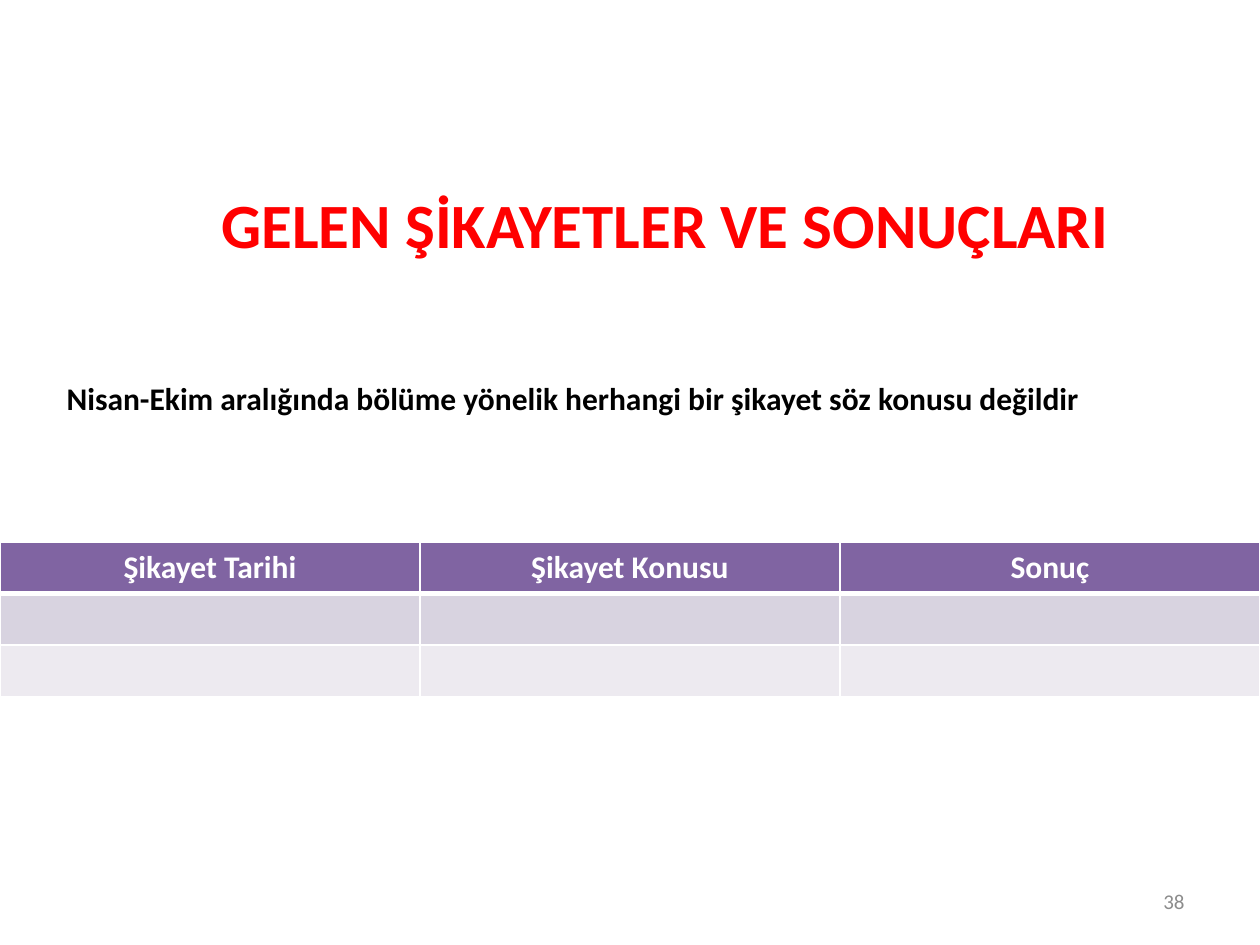
from dataclasses import dataclass

from lxml import etree
from pptx import Presentation
from pptx import util as u
from pptx.dml.color import RGBColor
from pptx.enum import text
from pptx.oxml.ns import qn

TITLE = "GELEN ŞİKAYETLER VE SONUÇLARI"
STATEMENT = "Nisan-Ekim aralığında bölüme yönelik herhangi bir şikayet söz konusu değildir"
PAGE_NUMBER = "38"
TABLE_ROWS = [
    ("Şikayet Tarihi", "Şikayet Konusu", "Sonuç"),
    ("", "", ""),
    ("", "", ""),
]

WIDTH, HEIGHT = u.Inches(10), u.Inches(7.5)
ROW_HEIGHT = u.Inches(0.41)


@dataclass(frozen=True)
class Theme:
    font: str = "Calibri"
    title: str = "FF0000"
    body: str = "000000"
    muted: str = "8C8C8C"
    white: str = "FFFFFF"
    row_fills: tuple = ("8064A2", "D8D3E0", "EDEAF0")
    title_size: int = 36
    body_size: int = 18
    number_size: int = 12


THEME = Theme()


def place(box, left, top, width, height):
    box.left, box.top = u.Inches(left), u.Inches(top)
    box.width, box.height = u.Inches(width), u.Inches(height)


def write(frame, words, size, color, bold=True, align=text.PP_ALIGN.LEFT,
          anchor=text.MSO_ANCHOR.TOP):
    frame.word_wrap = True
    frame.vertical_anchor = anchor
    para = frame.paragraphs[0]
    para.alignment = align
    span = para.add_run()
    span.text = words
    span.font.name = THEME.font
    span.font.size = u.Pt(size)
    span.font.bold = bold
    span.font.color.rgb = RGBColor.from_string(color)


def add_borders(cell, widths):
    """Draw white cell borders; widths maps side tags to points."""
    properties = cell._tc.get_or_add_tcPr()
    for side, points in widths.items():
        line = etree.SubElement(properties, qn(f"a:{side}"), w=str(u.Pt(points)))
        fill = etree.SubElement(line, qn("a:solidFill"))
        etree.SubElement(fill, qn("a:srgbClr"), val=THEME.white)


def add_complaint_table(page):
    row_count, column_count = len(TABLE_ROWS), len(TABLE_ROWS[0])
    table = page.shapes.add_table(row_count, column_count, 0, u.Inches(4.3),
                                  WIDTH, ROW_HEIGHT * row_count).table
    for r, labels in enumerate(TABLE_ROWS):
        table.rows[r].height = ROW_HEIGHT
        top = 3 if r == 1 else 1
        bottom = 3 if r == 0 else 1
        for c, label in enumerate(labels):
            cell = table.cell(r, c)
            add_borders(cell, {"lnL": 1, "lnR": 1, "lnT": top, "lnB": bottom})
            cell.fill.solid()
            cell.fill.fore_color.rgb = RGBColor.from_string(THEME.row_fills[r])
            if label:
                write(cell.text_frame, label, THEME.body_size, THEME.white,
                      align=text.PP_ALIGN.CENTER)


def main():
    deck = Presentation()
    deck.slide_width, deck.slide_height = WIDTH, HEIGHT
    page = deck.slides.add_slide(deck.slide_layouts[5])

    title = page.shapes.title
    place(title, 1.46, 1.42, 7.64, 0.71)
    write(title.text_frame, TITLE, THEME.title_size, THEME.title,
          align=text.PP_ALIGN.CENTER)

    number = page.shapes.add_textbox(0, 0, 0, 0)
    place(number, 7.17, 6.95, 2.33, 0.4)
    write(number.text_frame, PAGE_NUMBER, THEME.number_size, THEME.muted, bold=False,
          align=text.PP_ALIGN.RIGHT, anchor=text.MSO_ANCHOR.MIDDLE)

    statement = page.shapes.add_textbox(0, 0, 0, 0)
    place(statement, 0.43, 2.96, 8.35, 0.4)
    write(statement.text_frame, STATEMENT, THEME.body_size, THEME.body)

    add_complaint_table(page)
    deck.save("out.pptx")


if __name__ == "__main__":
    main()
